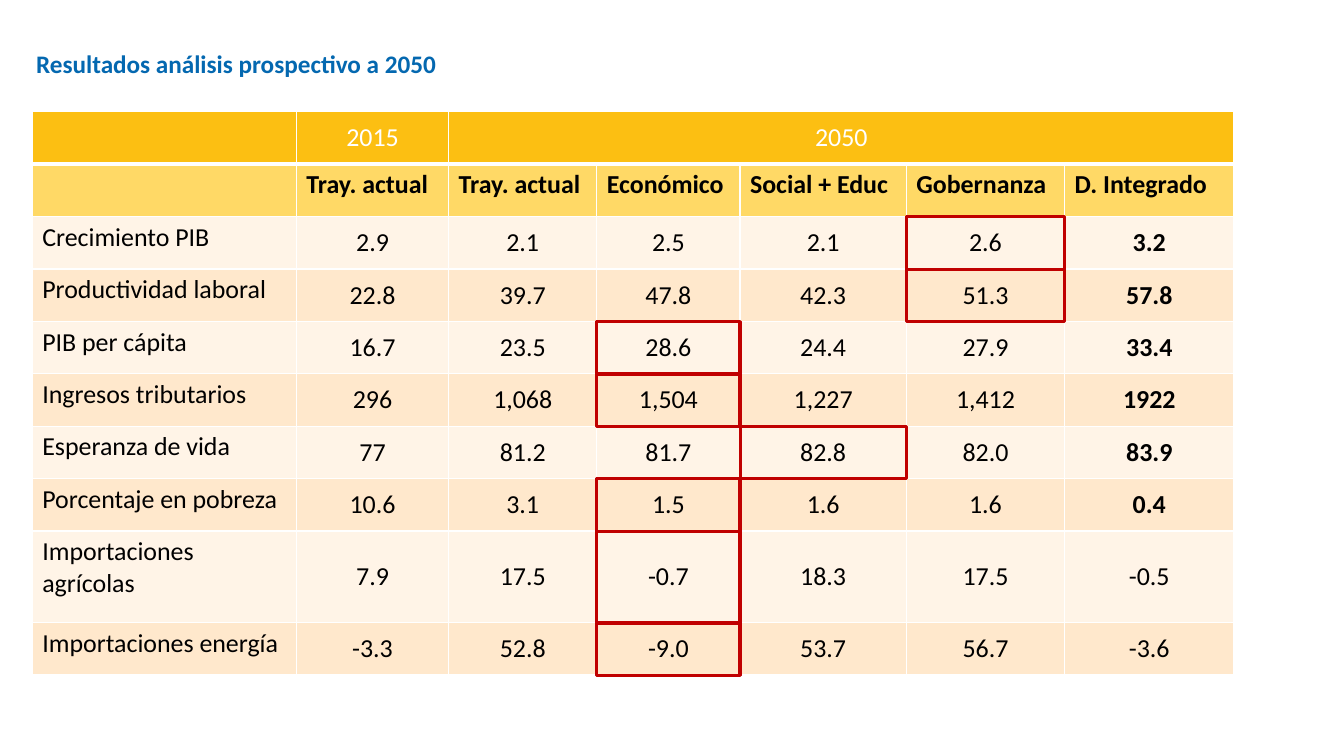
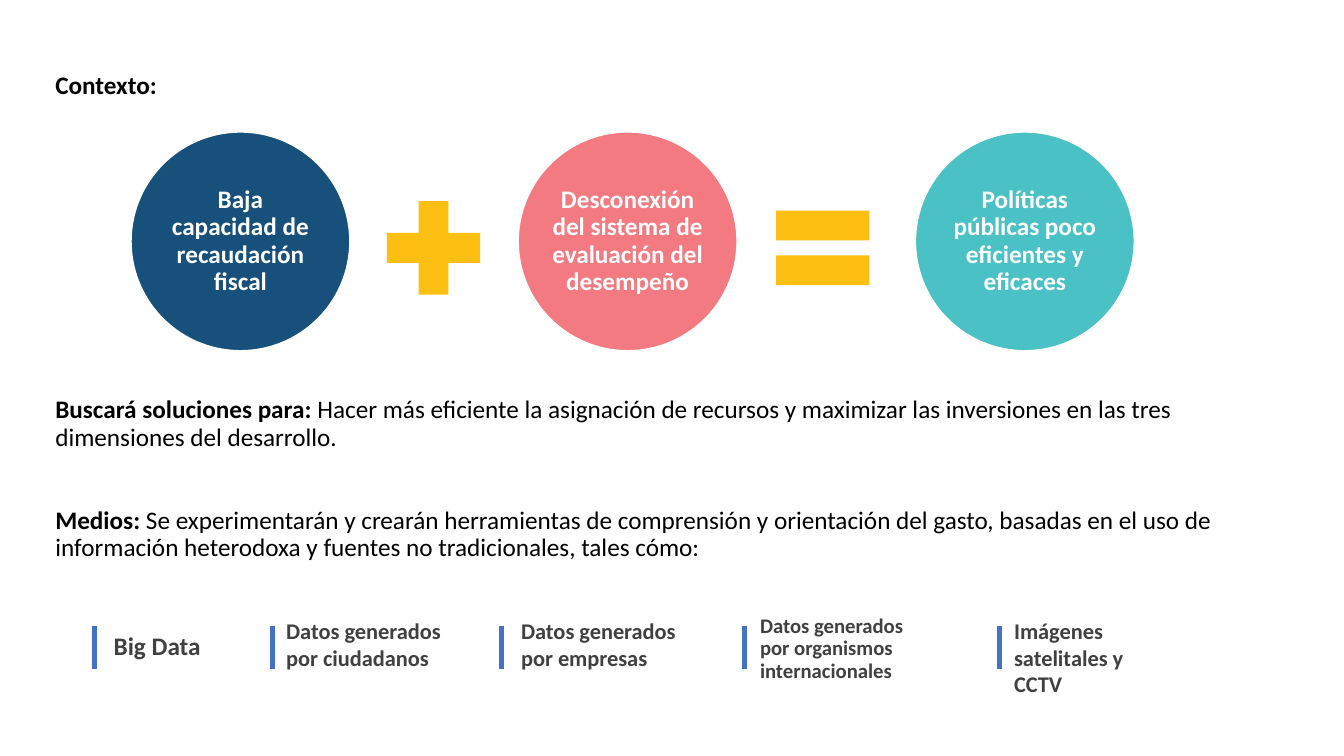
"""Build two slides: a table of 2050 prospective results and the context of the solutions sought."""
import pptx
import pptx.dml.color
import pptx.enum.shapes
import pptx.enum.text
import pptx.oxml
import pptx.oxml.ns
import pptx.util

PX = 9144
FONT = "Calibri"
COLORS = {
    "white": "FFFFFF", "black": "000000", "gray": "404040", "title": "0468B0",
    "amber": "FCBF12", "subheader": "FFD966", "light": "FFF4E7", "dark": "FFE8CC",
    "red": "C00000", "navy": "17507B", "pink": "F27A80", "teal": "4AC1C4", "blue": "4472C4",
}
RGB = {name: pptx.dml.color.RGBColor.from_string(value) for name, value in COLORS.items()}
SHAPES = pptx.enum.shapes.MSO_SHAPE
CENTER = pptx.enum.text.PP_ALIGN.CENTER
MIDDLE = pptx.enum.text.MSO_ANCHOR.MIDDLE


def add_run(paragraph, text, size, color, bold=False):
    """Append one formatted run to a paragraph."""
    run = paragraph.add_run()
    run.text = text
    run.font.name = FONT
    run.font.size = pptx.util.Pt(size)
    run.font.bold = bold
    run.font.color.rgb = RGB[color]


def add_text_frame(slide, left, top, width, height, wrap=True):
    """Add a text box, placed in px, and return its text frame."""
    box = slide.shapes.add_textbox(left * PX, top * PX, width * PX, height * PX)
    box.text_frame.word_wrap = wrap
    return box.text_frame


presentation = pptx.Presentation()
presentation.slide_width = 1333 * PX
presentation.slide_height = 750 * PX
blank_layout = presentation.slide_layouts[6]

results_slide = presentation.slides.add_slide(blank_layout)
title_frame = add_text_frame(results_slide, 26, 43, 420, 40, wrap=False)
add_run(title_frame.paragraphs[0], "Resultados análisis prospectivo a 2050", 18, "title", True)

table_left, table_top = 32, 111
column_widths = [262, 151, 147, 142, 165, 157, 168]
row_heights = [52] * 8 + [91, 52]
rows = [
    ["", "2015", "2050", "", "", "", ""],
    ["", "Tray. actual", "Tray. actual", "Económico", "Social + Educ", "Gobernanza", "D. Integrado"],
    ["Crecimiento PIB", "2.9", "2.1", "2.5", "2.1", "2.6", "3.2"],
    ["Productividad laboral", "22.8", "39.7", "47.8", "42.3", "51.3", "57.8"],
    ["PIB per cápita", "16.7", "23.5", "28.6", "24.4", "27.9", "33.4"],
    ["Ingresos tributarios", "296", "1,068", "1,504", "1,227", "1,412", "1922"],
    ["Esperanza de vida", "77", "81.2", "81.7", "82.8", "82.0", "83.9"],
    ["Porcentaje en pobreza", "10.6", "3.1", "1.5", "1.6", "1.6", "0.4"],
    ["Importaciones agrícolas", "7.9", "17.5", "-0.7", "18.3", "17.5", "-0.5"],
    ["Importaciones energía", "-3.3", "52.8", "-9.0", "53.7", "56.7", "-3.6"],
]
table = results_slide.shapes.add_table(
    len(rows), len(column_widths), table_left * PX, table_top * PX,
    sum(column_widths) * PX, sum(row_heights) * PX).table
for column, width in zip(table.columns, column_widths):
    column.width = width * PX
for row, height in zip(table.rows, row_heights):
    row.height = height * PX
table.cell(0, 2).merge(table.cell(0, 6))

row_fills = ["amber", "subheader"] + ["light", "dark"] * 4
for row_index, row_values in enumerate(rows):
    for column_index, value in enumerate(row_values):
        cell = table.cell(row_index, column_index)
        cell.fill.solid()
        cell.fill.fore_color.rgb = RGB[row_fills[row_index]]
        cell_properties = cell._tc.get_or_add_tcPr()
        for position, side in enumerate(["lnL", "lnR", "lnT", "lnB"]):
            border_width = pptx.util.Pt(3 if row_index == 0 and side == "lnB" else 1)
            border = pptx.oxml.parse_xml(
                f'<a:{side} {pptx.oxml.ns.nsdecls("a")} w="{border_width}"><a:solidFill>'
                f'<a:srgbClr val="{COLORS["white"]}"/></a:solidFill></a:{side}>')
            cell_properties.insert(position, border)
        if not value:
            continue
        paragraph = cell.text_frame.paragraphs[0]
        if row_index != 1 and column_index > 0:
            cell.vertical_anchor = MIDDLE
            paragraph.alignment = CENTER
        bold = row_index == 1 or (column_index == 6 and row_index < 8)
        add_run(paragraph, value, 18.5, "white" if row_index == 0 else "black", bold)

highlighted_cells = [(4, 3), (5, 3), (6, 4), (7, 3), (8, 3), (9, 3), (2, 5), (3, 5)]
for row_index, column_index in highlighted_cells:
    frame = results_slide.shapes.add_shape(
        SHAPES.RECTANGLE,
        (table_left + sum(column_widths[:column_index])) * PX,
        (table_top + sum(row_heights[:row_index])) * PX,
        column_widths[column_index] * PX, row_heights[row_index] * PX)
    frame.shadow.inherit = False
    frame.fill.background()
    frame.line.color.rgb = RGB["red"]
    frame.line.width = pptx.util.Pt(2.25)

context_slide = presentation.slides.add_slide(blank_layout)
text_blocks = [
    (67, 41, [("Contexto:", "")]),
    (389, 178, [
        ("Buscará soluciones para: ",
         "Hacer más eficiente la asignación de recursos y maximizar las inversiones "
         "en las tres dimensiones del desarrollo."),
        ("Medios: ",
         "Se experimentarán y crearán herramientas de comprensión y orientación del gasto, "
         "basadas en el uso de información heterodoxa y fuentes no tradicionales, tales cómo:"),
    ]),
]
for top, height, entries in text_blocks:
    text_frame = add_text_frame(context_slide, 45, top, 1212, height)
    for index, (label, body) in enumerate(entries):
        paragraph = text_frame.add_paragraph() if index else text_frame.paragraphs[0]
        paragraph.line_spacing = 0.9
        if index:
            paragraph.space_before = pptx.util.Pt(40)
        add_run(paragraph, label, 18, "black", True)
        if body:
            add_run(paragraph, body, 18, "black")

circles = [
    (130, "navy", "Baja capacidad de recaudación fiscal"),
    (514, "pink", "Desconexión del sistema de evaluación del desempeño"),
    (908, "teal", "Políticas públicas poco eficientes y eficaces"),
]
for left, color, text in circles:
    circle = context_slide.shapes.add_shape(SHAPES.OVAL, left * PX, 131 * PX, 217 * PX, 217 * PX)
    circle.shadow.inherit = False
    circle.fill.solid()
    circle.fill.fore_color.rgb = RGB[color]
    circle.line.color.rgb = RGB["white"]
    circle.line.width = pptx.util.Pt(1)
    text_frame = circle.text_frame
    text_frame.word_wrap = True
    text_frame.vertical_anchor = MIDDLE
    text_frame.margin_left = text_frame.margin_right = 2 * PX
    text_frame.margin_top = text_frame.margin_bottom = 2 * PX
    paragraph = text_frame.paragraphs[0]
    paragraph.alignment = CENTER
    paragraph.line_spacing = 0.9
    add_run(paragraph, text, 18, "white", True)

for left, operator in [(367, SHAPES.MATH_PLUS), (753, SHAPES.MATH_EQUAL)]:
    sign = context_slide.shapes.add_shape(operator, left * PX, 183 * PX, 126 * PX, 126 * PX)
    sign.shadow.inherit = False
    sign.fill.solid()
    sign.fill.fore_color.rgb = RGB["amber"]
    sign.line.fill.background()

sources = [
    (94, 103, 620, 113, 18, 1, "Big Data"),
    (270, 274, 607, 176, 16, 1, "Datos generados por ciudadanos"),
    (497, 507, 607, 176, 16, 1, "Datos generados por empresas"),
    (738, 744, 606, 176, 14.8, 0.9, "Datos generados por organismos internacionales"),
    (991, 996, 607, 176, 16, 1, "Imágenes satelitales y CCTV"),
]
for bar_left, text_left, top, width, size, spacing, text in sources:
    text_frame = add_text_frame(context_slide, text_left, top, width, 67)
    paragraph = text_frame.paragraphs[0]
    paragraph.line_spacing = float(spacing)
    add_run(paragraph, text, size, "gray", True)
    bar = context_slide.shapes.add_connector(
        pptx.enum.shapes.MSO_CONNECTOR.STRAIGHT,
        bar_left * PX, 621 * PX, bar_left * PX, 664 * PX)
    bar.line.color.rgb = RGB["blue"]
    bar.line.width = pptx.util.Pt(3.5)
    bar._element.spPr.append(
        pptx.oxml.parse_xml(f'<a:effectLst {pptx.oxml.ns.nsdecls("a")}/>'))

presentation.save("out.pptx")
